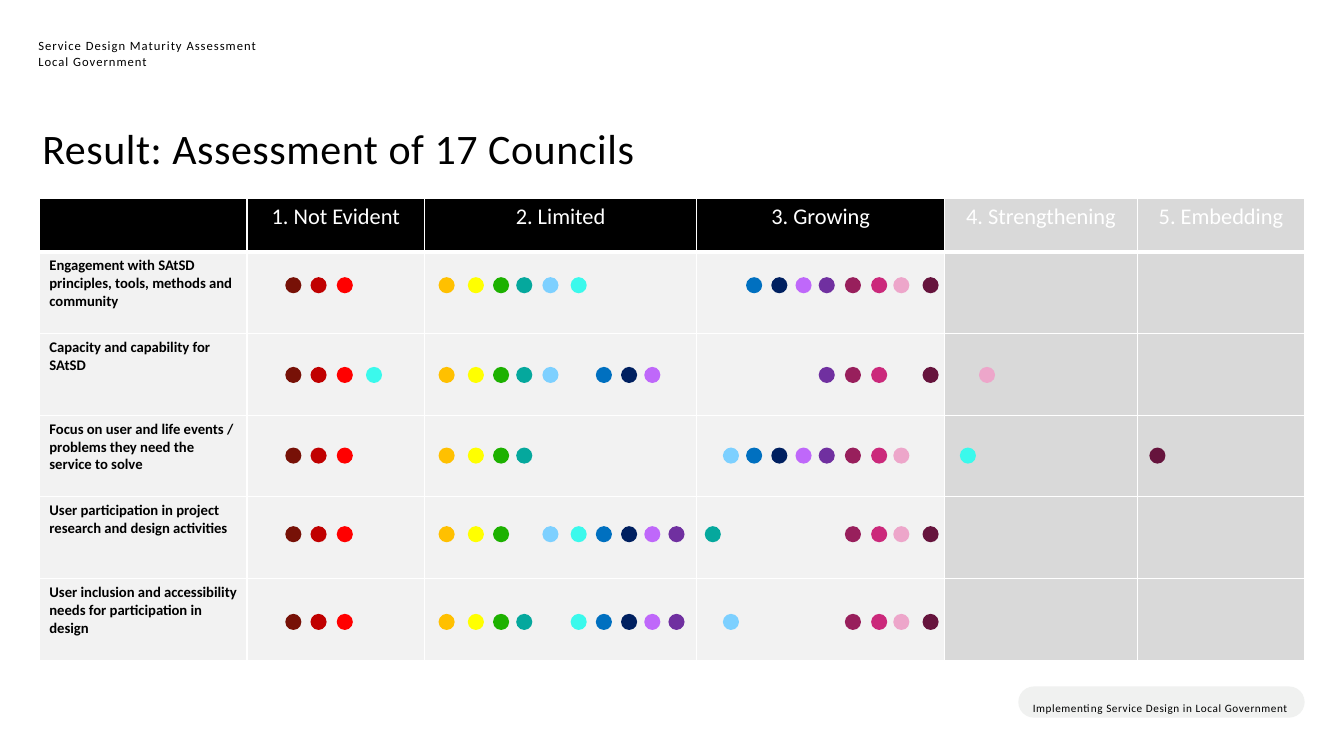
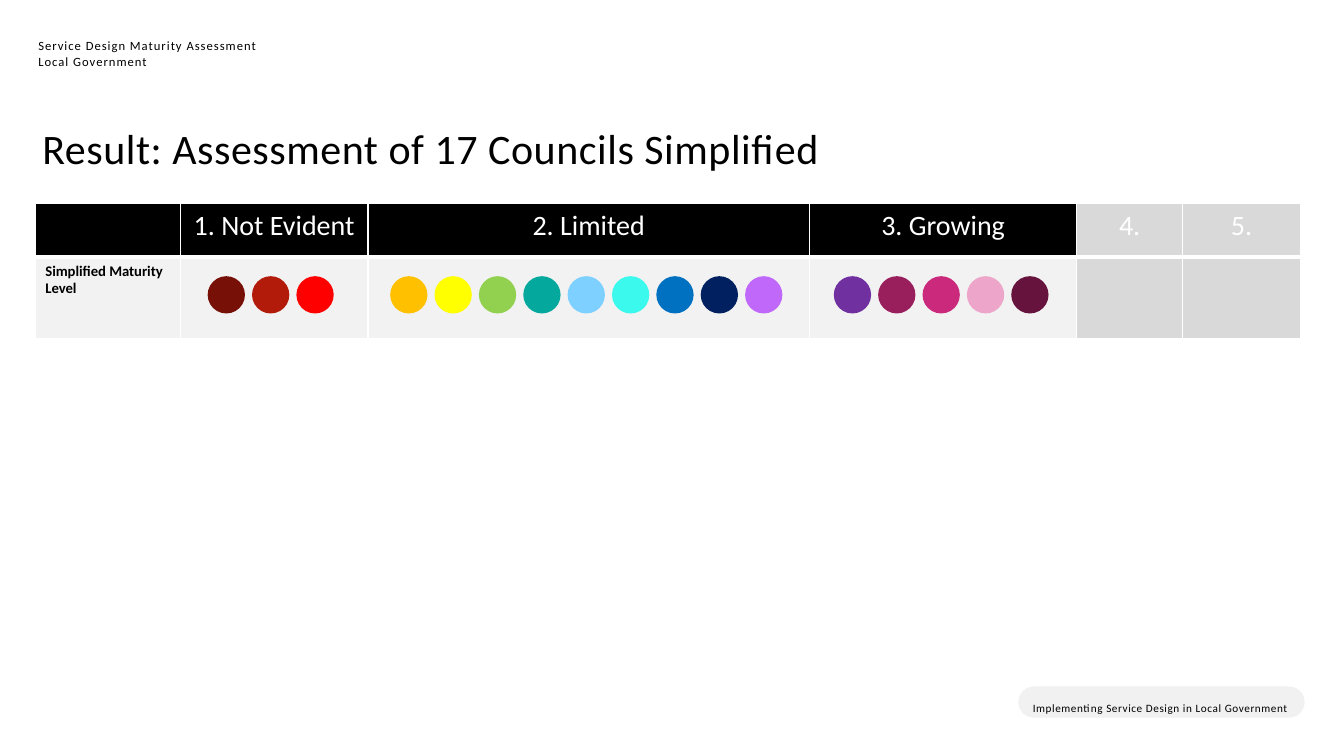
from pptx import Presentation, util as u
from pptx.dml.color import RGBColor
from pptx.enum import shapes, text
from pptx.oxml import parse_xml
from pptx.oxml.ns import nsdecls

FONT = "Calibri"
COLOURS = {
    "black": "000000", "white": "FFFFFF", "pale": "F2F2F2", "grey": "D9D9D9", "pill": "F0F1F0",
    "maroon": "771107", "crimson": "C00000", "brick": "B21A0A", "red": "FF0000",
    "amber": "FFC000", "yellow": "FFFF00", "green": "1DB100", "lime": "92D050",
    "teal": "05A89D", "sky": "7DD0FF", "aqua": "3BF9EC", "blue": "0070C0",
    "navy": "002060", "violet": "BF68FA", "purple": "7030A0", "plum": "981F5C",
    "magenta": "CB297B", "pink": "EDA6CA", "wine": "66143D",
}
HEADER = ["Service Design Maturity Assessment", "Local Government"]
FOOTER = "Implementing Service Design in Local Government"
LEVELS = ["1. Not Evident", "2. Limited", "3. Growing"]

DETAIL = {
    "title": "Result: Assessment of 17 Councils",
    "at": (0.39, 1.97), "columns": [2.06, 1.76, 2.7, 2.46, 1.91, 1.66], "head_size": 16,
    "heads": LEVELS + ["4. Strengthening", "5. Embedding"],
    "labels": [
        "Engagement with SAtSD principles, tools, methods and community",
        "Capacity and capability for SAtSD",
        "Focus on user and life events / problems they need the service to solve",
        "User participation in project research and design activities",
        "User inclusion and accessibility needs for participation in design",
    ],
}
SIMPLIFIED = {
    "title": "Result: Assessment of 17 Councils Simplified",
    "at": (0.35, 2.02), "columns": [1.44, 1.86, 4.38, 2.65, 1.05, 1.17], "head_size": 20,
    "heads": LEVELS + ["4.", "5."],
    "labels": ["Simplified Maturity Level"],
}

DOT_TOPS = [2.75, 3.64, 4.44, 5.22, 6.09]
COUNCILS = [
    ("maroon", "11111", {"1": 2.83}),
    ("crimson", "11111", {"1": 3.08}),
    ("red", "11111", {"1": 3.34}),
    ("amber", "22222", {"2": 4.35}),
    ("yellow", "22222", {"2": 4.64}),
    ("green", "22222", {"2": 4.89}),
    ("teal", "22232", {"2": 5.12, "3": 6.99}),
    ("sky", "22323", {"2": 5.38, "3": 7.17}),
    ("aqua", "21422", {"1": 3.63, "2": 5.66, "4": 9.52}),
    ("blue", "32322", {"2": 5.91, "3": 7.4}),
    ("navy", "32322", {"2": 6.16, "3": 7.65}),
    ("violet", "32322", {"2": 6.39, "3": 7.89}),
    ("purple", "33322", {"2": 6.63, "3": 8.12}),
    ("plum", "33333", {"3": 8.38}),
    ("magenta", "33333", {"3": 8.64}),
    ("pink", "34333", {"3": 8.86, "4": 9.71}),
    ("wine", "33533", {"3": 9.15, "5": 11.4}),
]
SIMPLE_GROUPS = [
    (2.06, ["maroon", "brick", "red"]),
    (3.87, ["amber", "yellow", "lime", "teal", "sky", "aqua", "blue", "navy", "violet"]),
    (8.27, ["purple", "plum", "magenta", "pink", "wine"]),
]


def rgb(name):
    return RGBColor.from_string(COLOURS[name])


def write(para, lines, size, colour="black", bold=False, spacing=0):
    for index, line in enumerate(lines):
        if index:
            para.add_line_break()
        span = para.add_run()
        span.text = line
        for key, value in {"name": FONT, "size": u.Pt(size), "bold": bold}.items():
            setattr(span.font, key, value)
        span.font.color.rgb = rgb(colour)
        if spacing:
            span.font._element.set("spc", str(round(spacing * 100)))


def set_frame(frame, inset):
    settings = {"word_wrap": True, "vertical_anchor": text.MSO_ANCHOR.TOP}
    for side in ("left", "top", "right", "bottom"):
        settings["margin_" + side] = u.Inches(inset)
    for key, value in settings.items():
        setattr(frame, key, value)
    para = frame.paragraphs[0]
    para.alignment = text.PP_ALIGN.LEFT
    return para


def add_solid(page, kind, place, colour):
    shape = page.shapes.add_shape(kind, *map(u.Inches, place))
    shape.shadow.inherit = False
    shape.fill.solid()
    shape.fill.fore_color.rgb = rgb(colour)
    shape.line.fill.background()
    return shape


def add_dot(page, left, top, size, colour):
    add_solid(page, shapes.MSO_SHAPE.OVAL, (left, top, size, size), colour)


def add_text(page, place, lines, size, spacing):
    box = page.shapes.add_textbox(*map(u.Inches, place))
    para = set_frame(box.text_frame, 0.03)
    write(para, lines, size, spacing=spacing)
    return para


def set_cell(cell, colour, top, bottom):
    props = cell._tc.get_or_add_tcPr()
    for side, width in (("L", 1), ("R", 1), ("T", top), ("B", bottom)):
        props.append(parse_xml(
            f'<a:ln{side} {nsdecls("a")} w="{u.Pt(width)}"><a:solidFill>'
            f'<a:srgbClr val="{COLOURS["white"]}"/></a:solidFill></a:ln{side}>'))
    cell.fill.solid()
    cell.fill.fore_color.rgb = rgb(colour)


def add_levels(page, data):
    rows = [0.53] + [0.81] * len(data["labels"])
    place = (*data["at"], sum(data["columns"]), sum(rows))
    table = page.shapes.add_table(len(rows), len(data["columns"]), *map(u.Inches, place)).table
    table.horz_banding = False
    for column, width in zip(table.columns, data["columns"]):
        column.width = u.Inches(width)
    for r, height in enumerate(rows):
        table.rows[r].height = u.Inches(height)
        for c in range(len(data["columns"])):
            colour = "grey" if c > 3 else "pale" if r else "black"
            set_cell(table.cell(r, c), colour, 3 if r == 1 else 1, 1 if r else 3)
    for c, head in enumerate(data["heads"], 1):
        para = table.cell(0, c).text_frame.paragraphs[0]
        para.alignment = text.PP_ALIGN.CENTER
        write(para, [head], data["head_size"], "white")
    for r, label in enumerate(data["labels"], 1):
        write(table.cell(r, 0).text_frame.paragraphs[0], [label], 10.5, bold=True)


def add_page(deck, data):
    page = deck.slides.add_slide(deck.slide_layouts[6])
    add_levels(page, data)
    add_text(page, (0.39, 1.04, 10.02, 0.66), [data["title"]], 30, 0.4).line_spacing = 1.3
    add_text(page, (0.35, 0.35, 6.21, 0.36), HEADER, 9, 0.7)
    pill = add_solid(page, shapes.MSO_SHAPE.ROUNDED_RECTANGLE, (10.1, 6.81, 2.84, 0.31), "pill")
    pill.adjustments[0] = 0.5
    write(set_frame(pill.text_frame, 0.1), [FOOTER], 8, spacing=0.4)
    return page


def main():
    deck = Presentation()
    deck.slide_width, deck.slide_height = u.Inches(13.33), u.Inches(7.5)

    page = add_page(deck, DETAIL)
    for colour, levels, lefts in COUNCILS:
        for level, top in zip(levels, DOT_TOPS):
            add_dot(page, lefts[level], top, 0.16, colour)

    page = add_page(deck, SIMPLIFIED)
    for start, colours in SIMPLE_GROUPS:
        for index, colour in enumerate(colours):
            add_dot(page, start + index * 0.44, 2.74, 0.37, colour)

    deck.save("out.pptx")


if __name__ == "__main__":
    main()
